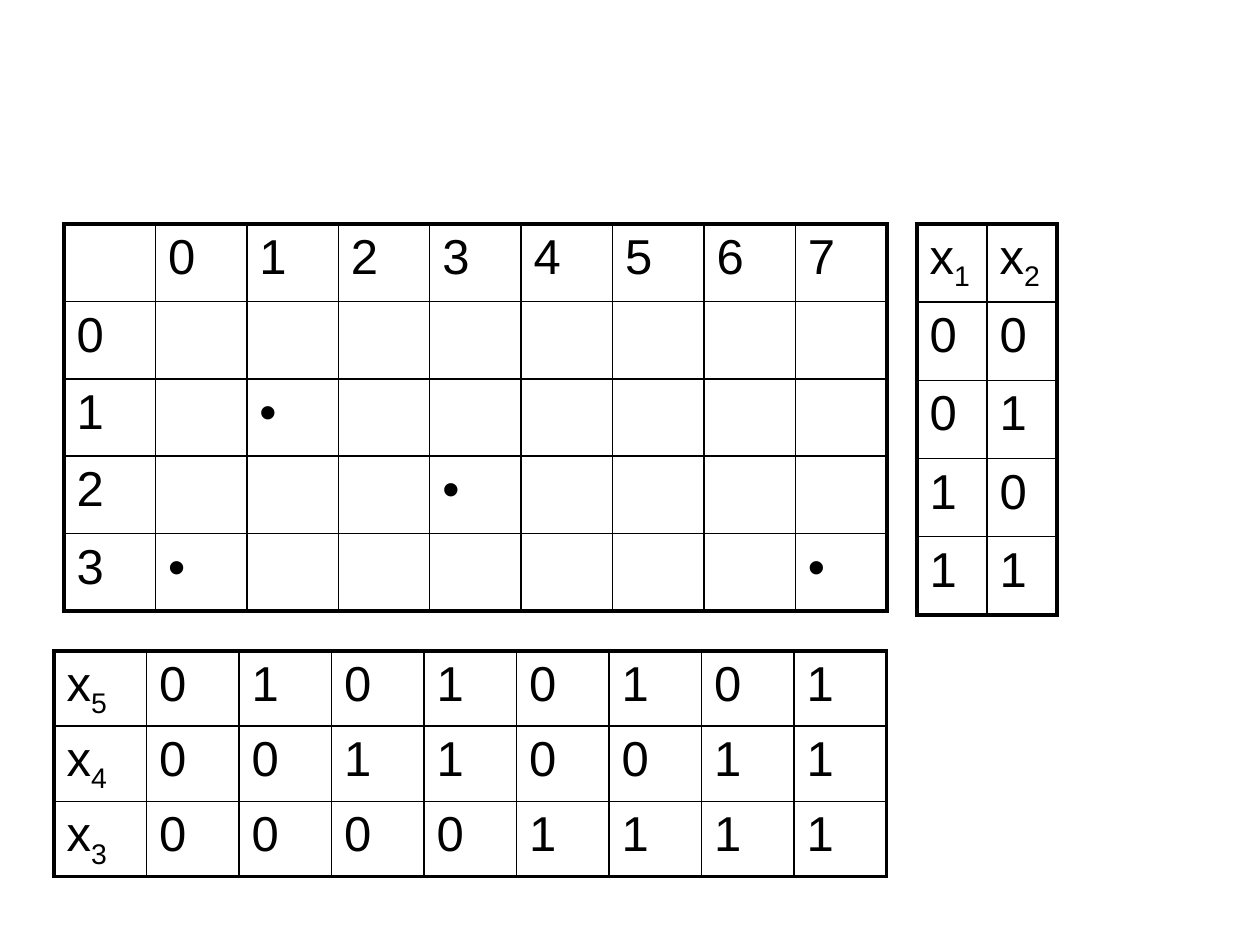
from lxml.etree import SubElement as add_element
from pptx import Presentation
from pptx.dml.color import RGBColor
from pptx.oxml.ns import qn
from pptx.util import Pt

EMU_PER_PX = 914400 / 126
COLORS = {"ink": "000000"}
INNER_LINE, OUTER_LINE = 1, 2.25


def px(length):
    return round(length * EMU_PER_PX)


def write_text(cell, text, size=28, font="Arial", color="ink"):
    paragraph = cell.text_frame.paragraphs[0]
    base, _, subscript = text.partition("_")
    for part, baseline in ((base, 0), (subscript, -25000)):
        if not part:
            continue
        run = paragraph.add_run()
        run.text = part
        run.font.size = Pt(size)
        run.font.name = font
        run.font.color.rgb = RGBColor.from_string(COLORS[color])
        if baseline:
            run.font._element.set("baseline", str(baseline))


def draw_border(cell, side, width):
    properties = cell._tc.get_or_add_tcPr()
    line = add_element(properties, qn(f"a:ln{side}"), w=str(Pt(width)))
    fill = add_element(line, qn("a:solidFill"))
    add_element(fill, qn("a:srgbClr"), val=COLORS["ink"])


def split_evenly(length, count):
    edges = [px(length * i / count) for i in range(count + 1)]
    return [end - start for start, end in zip(edges, edges[1:])]


def add_grid(slide, box, entries):
    left, top, width, height = box
    row_count, column_count = len(entries), len(entries[0])
    grid = slide.shapes.add_table(
        row_count, column_count, px(left), px(top), px(width), px(height)
    ).table
    grid.first_row = grid.horz_banding = False
    for column, size in zip(grid.columns, split_evenly(width, column_count)):
        column.width = size
    for row, size in zip(grid.rows, split_evenly(height, row_count)):
        row.height = size
    for r, row_entries in enumerate(entries):
        for c, entry in enumerate(row_entries):
            cell = grid.cell(r, c)
            write_text(cell, entry)
            on_edge = {
                "L": c == 0,
                "R": c == column_count - 1,
                "T": r == 0,
                "B": r == row_count - 1,
            }
            for side, outer in on_edge.items():
                draw_border(cell, side, OUTER_LINE if outer else INNER_LINE)
            cell.fill.background()


def add_decomposition_chart(slide, box):
    dots = {(1, 1), (2, 3), (3, 0), (3, 7)}
    header = [""] + [str(column) for column in range(8)]
    body = [
        [str(row)] + ["•" if (row, column) in dots else "" for column in range(8)]
        for row in range(4)
    ]
    add_grid(slide, box, [header] + body)


def add_row_codes(slide, box):
    codes = [list(f"{row:02b}") for row in range(4)]
    add_grid(slide, box, [["x_1", "x_2"]] + codes)


def add_column_codes(slide, box):
    codes = [
        [f"x_{5 - bit}"] + [str(column >> bit & 1) for column in range(8)]
        for bit in range(3)
    ]
    add_grid(slide, box, codes)


def main():
    presentation = Presentation()
    presentation.slide_width = px(1260)
    presentation.slide_height = px(945)
    slide = presentation.slides.add_slide(presentation.slide_layouts[6])
    add_decomposition_chart(slide, (64, 224, 823, 387))
    add_row_codes(slide, (917, 224, 140, 391))
    add_column_codes(slide, (54, 651, 833, 214))
    presentation.save("out.pptx")


if __name__ == "__main__":
    main()
